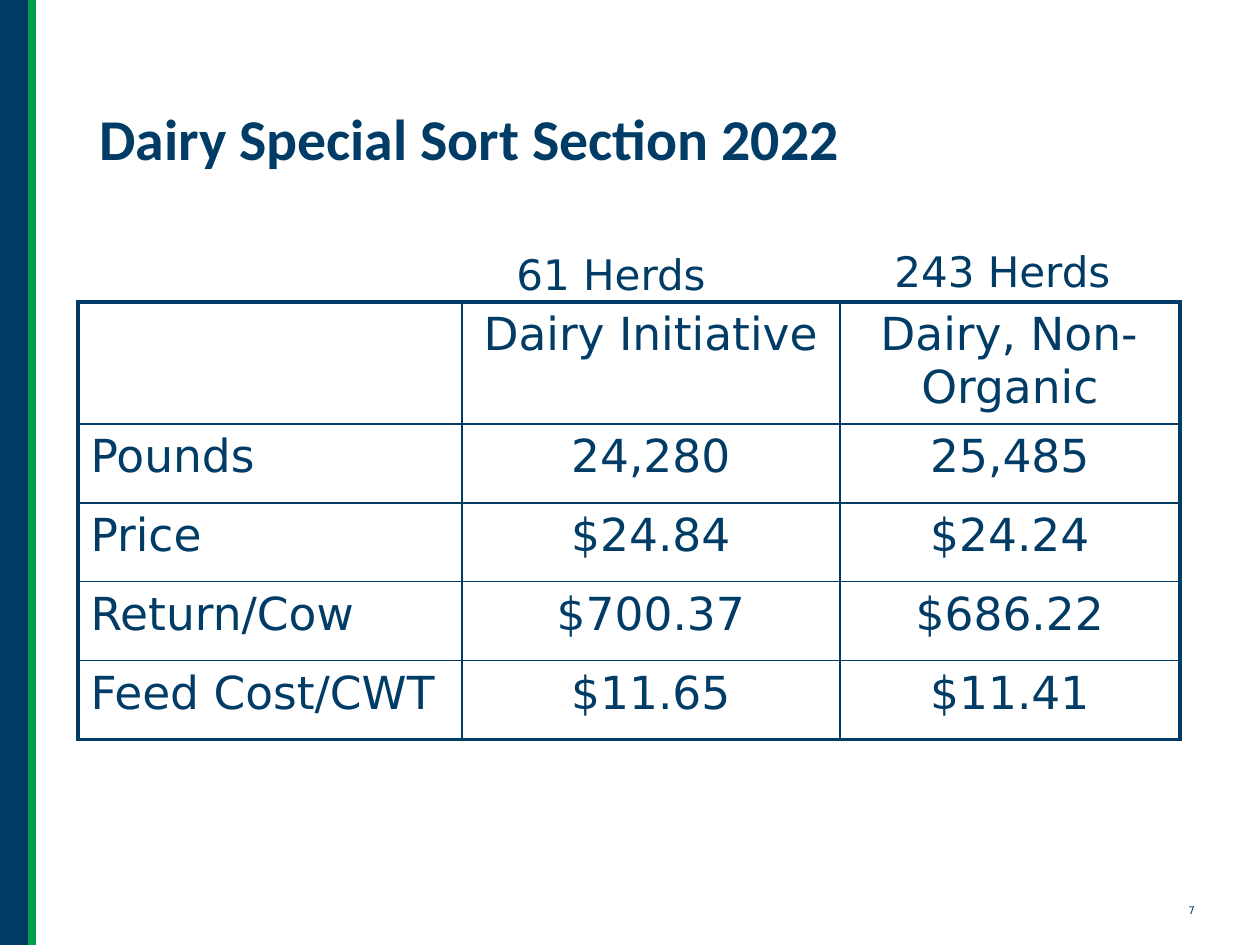
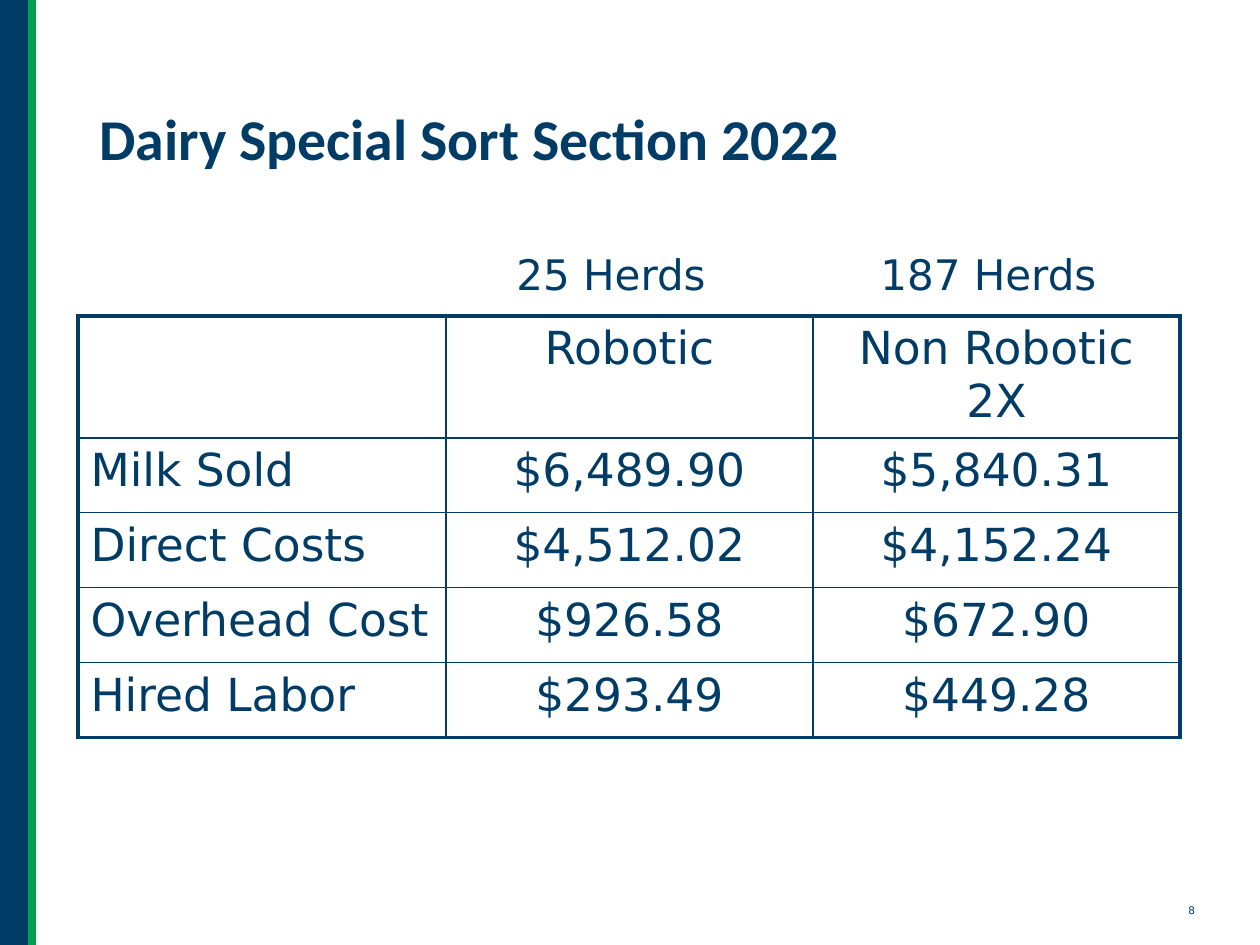
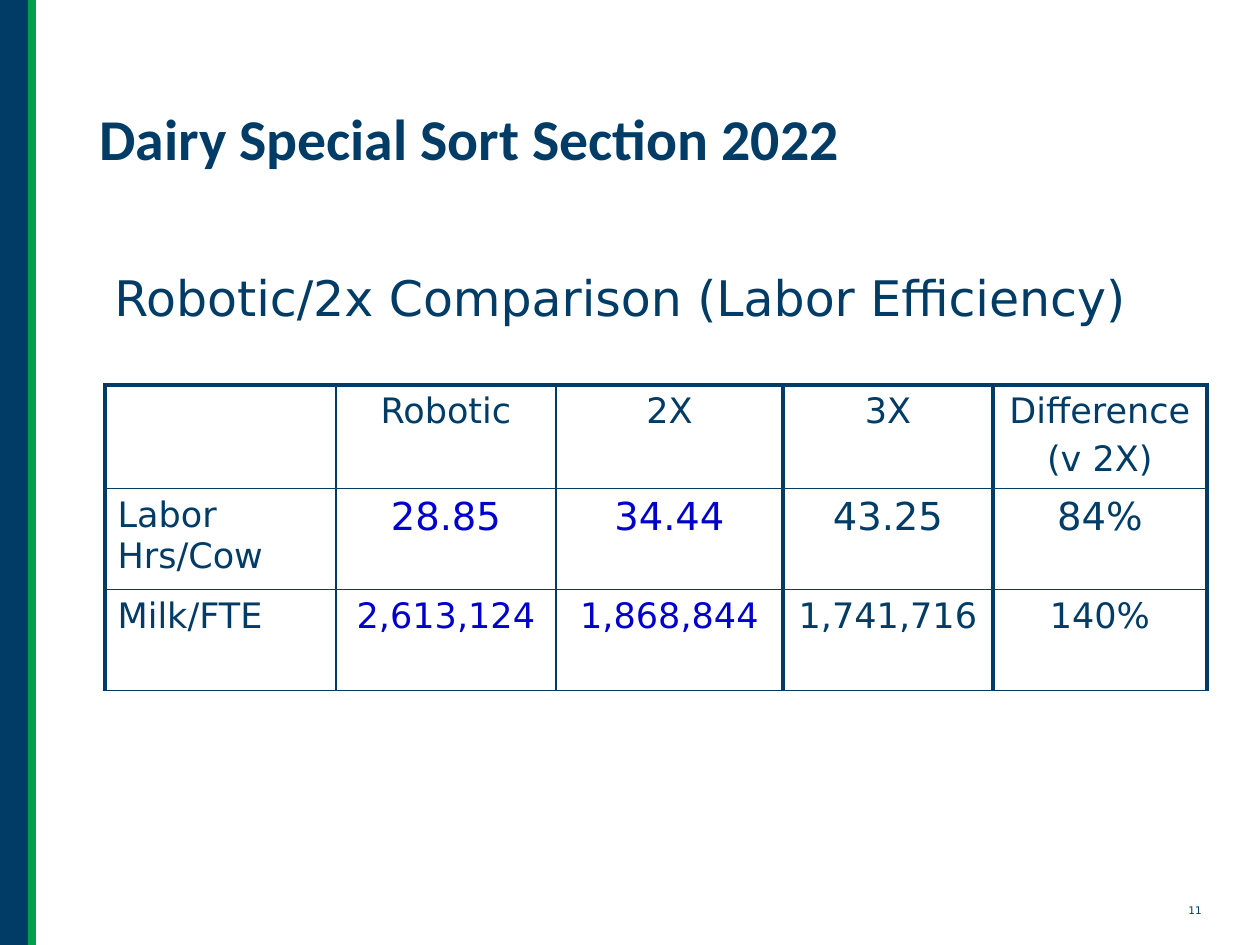
from typing import NamedTuple, Optional

from lxml import etree
from pptx import Presentation
from pptx import util as u
from pptx.dml.color import RGBColor
from pptx.enum import shapes, text
from pptx.oxml import ns

EMU_PER_PX = 914400 / 126
SLIDE_WIDTH, SLIDE_HEIGHT = 1260, 945
NAVY = RGBColor(0x00, 0x3C, 0x66)
GREEN = RGBColor(0x00, 0x9F, 0x4D)
BLUE = RGBColor(0x00, 0x00, 0xCC)
TITLE_FONT, BODY_FONT = "Calibri", "DejaVu Sans"
THIN, THICK = 1, 2.25
TITLE = "Dairy Special Sort Section 2022"


class Entry(NamedTuple):
    """A table cell whose text differs from the table's usual style."""
    words: str
    size: Optional[int] = None
    color: RGBColor = NAVY


def px(length):
    return u.Emu(round(length * EMU_PER_PX))


def add_border(cell, position, side, width):
    """Insert one border line ahead of the fill, as the schema orders them."""
    line = etree.Element(ns.qn(f"a:{side}"), w=str(u.Pt(width)))
    fill = etree.SubElement(line, ns.qn("a:solidFill"))
    etree.SubElement(fill, ns.qn("a:srgbClr"), val=str(NAVY))
    cell._tc.get_or_add_tcPr().insert(position, line)


class Deck:
    def __init__(self):
        self.presentation = Presentation()
        self.presentation.slide_width = px(SLIDE_WIDTH)
        self.presentation.slide_height = px(SLIDE_HEIGHT)
        self.slide = None

    def add_slide(self, number):
        """Start a slide with the side band, title and page number."""
        layout = self.presentation.slide_layouts[6]
        self.slide = self.presentation.slides.add_slide(layout)
        self.label(str(number), 1176, 898, 44, 25, 6)
        self.band(32)
        self.title(TITLE)

    def band(self, width):
        band = self.slide.shapes.add_shape(
            shapes.MSO_SHAPE.RECTANGLE, 0, 0, px(width), px(SLIDE_HEIGHT))
        band.shadow.inherit = False
        band.fill.solid()
        band.fill.fore_color.rgb = NAVY
        band.line.fill.background()
        edge = self.slide.shapes.add_connector(
            shapes.MSO_CONNECTOR.STRAIGHT,
            px(width), px(-10), px(width), px(SLIDE_HEIGHT))
        edge.line.color.rgb = GREEN
        edge.line.width = u.Pt(4.5)
        etree.SubElement(edge._element.spPr, ns.qn("a:effectLst"))

    def run(self, paragraph, words, size, color=NAVY, font=BODY_FONT, bold=False):
        run = paragraph.add_run()
        run.text = words
        run.font.name = font
        run.font.size = u.Pt(size)
        run.font.bold = bold
        run.font.color.rgb = color

    def text_frame(self, left, top, width, height, wrap):
        box = self.slide.shapes.add_textbox(px(left), px(top), px(width), px(height))
        box.text_frame.word_wrap = wrap
        return box.text_frame

    def title(self, words):
        frame = self.text_frame(87, 50, 1086, 183, True)
        frame.vertical_anchor = text.MSO_ANCHOR.MIDDLE
        paragraph = frame.paragraphs[0]
        paragraph.line_spacing = 0.9
        self.run(paragraph, words, 33, font=TITLE_FONT, bold=True)

    def label(self, words, left, top, width, height, size, wrap=False):
        frame = self.text_frame(left, top, width, height, wrap)
        frame.auto_size = text.MSO_AUTO_SIZE.SHAPE_TO_FIT_TEXT
        self.run(frame.paragraphs[0], words, size)

    def table(self, left, top, columns, heights, rows, size, thick_columns, thick_rows):
        """Draw a grid; thick_* list the grid lines that get a heavy border."""
        table = self.slide.shapes.add_table(
            len(heights), len(columns), px(left), px(top),
            px(sum(columns)), px(sum(heights))).table
        table.first_row = table.horz_banding = False
        for column, width in zip(table.columns, columns):
            column.width = px(width)
        for row, height in zip(table.rows, heights):
            row.height = px(height)
        for r, row in enumerate(rows):
            for c, entry in enumerate(row):
                if isinstance(entry, str):
                    entry = Entry(entry)
                cell = table.cell(r, c)
                self.fill_cell(cell, entry, entry.size or size, centred=c > 0)
                sides = (("lnL", c in thick_columns), ("lnR", c + 1 in thick_columns),
                         ("lnT", r in thick_rows), ("lnB", r + 1 in thick_rows))
                for position, (side, heavy) in enumerate(sides):
                    add_border(cell, position, side, THICK if heavy else THIN)

    def fill_cell(self, cell, entry, size, centred):
        cell.fill.background()
        for i, words in enumerate(entry.words.splitlines()):
            frame = cell.text_frame
            paragraph = frame.add_paragraph() if i else frame.paragraphs[0]
            if i:
                paragraph.space_before = u.Pt(size * 0.2)
            if centred:
                paragraph.alignment = text.PP_ALIGN.CENTER
            self.run(paragraph, words, size, entry.color)


def add_herd_slide(deck, number, top, columns, row_height, rows, herds):
    """Compare two herd groups, each with its herd count above its column."""
    deck.add_slide(number)
    deck.table(78, top, columns, [118] + [row_height] * 4, rows, 26, (0, 3), (0, 5))
    for words, left, label_top, width in herds:
        deck.label(words, left, label_top, width, 63, 24)


def add_labor_slide(deck):
    deck.add_slide(11)
    rows = [
        ("", "Robotic", "2X", "3X", "Difference\n(v 2X)"),
        ("Labor Hrs/Cow", Entry("28.85", 22, BLUE), Entry("34.44", 22, BLUE),
         Entry("43.25", 22), Entry("84%", 22)),
        ("Milk/FTE", Entry("2,613,124", color=BLUE), Entry("1,868,844", color=BLUE),
         "1,741,716", "140%"),
    ]
    deck.table(105, 385, (231, 220, 227, 210, 214), [101] * 3, rows, 20,
               (0, 3, 4, 5), (0,))
    deck.label("Robotic/2x Comparison (Labor Efficiency)", 102, 261, 1102, 72, 28, True)


def main():
    deck = Deck()
    add_herd_slide(
        deck, 7, 302, (384, 378, 340), 79,
        [("", "Dairy Initiative", "Dairy, Non-Organic"),
         ("Pounds", "24,280", "25,485"),
         ("Price", "$24.84", "$24.24"),
         ("Return/Cow", "$700.37", "$686.22"),
         ("Feed Cost/CWT", "$11.65", "$11.41")],
        [("61 Herds", 504, 242, 218), ("243 Herds", 882, 239, 244)])
    add_herd_slide(
        deck, 8, 316, (368, 367, 367), 75,
        [("", "Robotic", "Non Robotic 2X"),
         ("Milk Sold", "$6,489.90", "$5,840.31"),
         ("Direct Costs", "$4,512.02", "$4,152.24"),
         ("Overhead Cost", "$926.58", "$672.90"),
         ("Hired Labor", "$293.49", "$449.28")],
        [("25 Herds", 504, 242, 218), ("187 Herds", 868, 242, 244)])
    add_labor_slide(deck)
    deck.presentation.save("out.pptx")


if __name__ == "__main__":
    main()
